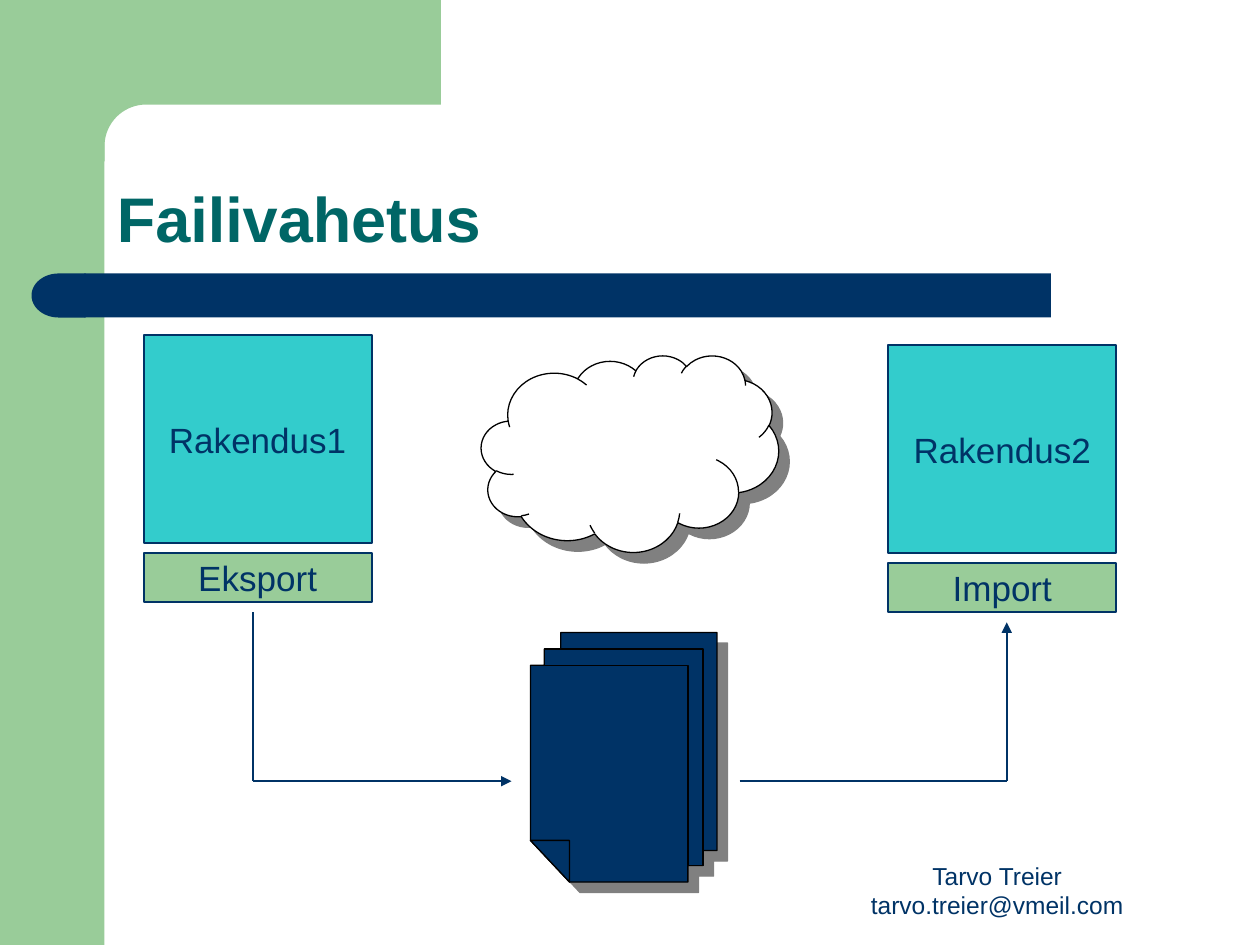
import math

import lxml.etree
import pptx
import pptx.dml.color
import pptx.enum.shapes
import pptx.enum.text
import pptx.oxml.ns
import pptx.util

Inches = pptx.util.Inches
SHAPE = pptx.enum.shapes.MSO_SHAPE
ANCHOR = pptx.enum.text.MSO_ANCHOR
ALIGN = pptx.enum.text.PP_ALIGN

NAVY, GREEN, TEAL, TURQUOISE = "003366", "99CC99", "006666", "33CCCC"
WHITE, BLACK, GREY = "FFFFFF", "000000", "808080"


def color(value):
    return pptx.dml.color.RGBColor.from_string(value)


def add_element(parent, tag, **attributes):
    element = lxml.etree.SubElement(parent, pptx.oxml.ns.qn(tag))
    for name, value in attributes.items():
        element.set(name, str(value))
    return element


def set_attributes(target, values):
    for name, value in values.items():
        setattr(target, name, value)


def style(shape, fill, line=None, width=1):
    shape.shadow.inherit = False
    shape.fill.solid()
    shape.fill.fore_color.rgb = color(fill)
    if line:
        shape.line.color.rgb = color(line)
        shape.line.width = pptx.util.Pt(width)
    else:
        shape.line.fill.background()
    return shape


def add_preset(slide, kind, box, fill, line=None, width=1):
    shape = slide.shapes.add_shape(kind, *map(Inches, box))
    return style(shape, fill, line, width)


def add_outline(slide, points, fill, line=None, width=1):
    # The builder keeps whole numbers only, so points go in as EMU
    start, *rest = [(Inches(x), Inches(y)) for x, y in points]
    builder = slide.shapes.build_freeform(*start)
    builder.add_line_segments(rest, close=True)
    return style(builder.convert_to_shape(), fill, line, width)


def add_drop_shadow(shape):
    effects = shape._element.spPr.find(pptx.oxml.ns.qn("a:effectLst"))
    shadow = add_element(effects, "a:outerShdw", dist=pptx.util.Pt(8.5),
                         dir=45 * 60000, algn="ctr", rotWithShape=0)
    add_element(shadow, "a:srgbClr", val=GREY)


def write(shape, text, size, fill, frame_format, paragraph_format, bold=False):
    frame = shape.text_frame
    set_attributes(frame, frame_format)
    paragraph = frame.paragraphs[0]
    paragraph.text = text
    set_attributes(paragraph, paragraph_format)
    for run in paragraph.runs:
        set_attributes(run.font, {"name": "Arial", "size": pptx.util.Pt(size), "bold": bold})
        run.font.color.rgb = color(fill)


def add_line(slide, start, end, arrow=None):
    line = slide.shapes.add_connector(pptx.enum.shapes.MSO_CONNECTOR.STRAIGHT,
                                      *map(Inches, start + end))
    line.line.color.rgb = color(NAVY)
    line.line.width = pptx.util.Pt(1)
    if arrow:
        add_element(line.line._get_or_add_ln(), arrow, type="triangle")
    add_element(line._element.spPr, "a:effectLst")


def draw_frame(slide, left, top, side, height):
    """Green side band, rounded inner corner and navy title bar."""
    add_preset(slide, SHAPE.RECTANGLE, (left, top, side, height), GREEN)
    radius, right, inner_top = 0.33, left + 3.5, top + 0.83
    # Quarter circle from the top of the inner corner down to the side band
    corner = [(left + side + radius * (1 - math.sin(angle)),
               inner_top + radius * (1 - math.cos(angle)))
              for angle in (math.radians(step) for step in range(0, 91, 5))]
    add_outline(slide, [(right, top), (right, inner_top), *corner,
                        (left + side, top + 1.28), (left + 0.5, top + 1.28),
                        (left + 0.5, top)], GREEN)
    add_preset(slide, SHAPE.RECTANGLE, (left + 0.67, top + 2.17, 7.67, 0.35), NAVY)
    cap = add_preset(slide, SHAPE.FLOWCHART_DELAY, (left + 0.25, top + 2.17, 0.43, 0.35), NAVY)
    cap.rotation = 180


def draw_text(slide, box, text, size, fill, paragraph_format, bold=False):
    text_box = slide.shapes.add_textbox(*map(Inches, box))
    write(text_box, text, size, fill,
          {"word_wrap": True, "vertical_anchor": ANCHOR.BOTTOM}, paragraph_format, bold)


def draw_application(slide, left, top, name, action):
    """Application box with its export or import strip below."""
    parts = ((name, top, 1.65, TURQUOISE), (action, top + 1.73, 0.39, GREEN))
    for text, part_top, height, fill in parts:
        shape = add_preset(slide, SHAPE.RECTANGLE, (left, part_top, 1.81, height), fill, NAVY)
        write(shape, text, 20, NAVY,
              {"word_wrap": False, "vertical_anchor": ANCHOR.MIDDLE,
               "margin_left": 0, "margin_right": 0},
              {"alignment": ALIGN.CENTER})


def draw_documents(slide, left, top, width, height):
    """Stack of three pages, the front one with a folded corner."""
    right, bottom = left + width, top + height
    x1, x2 = left + 0.11, left + 0.24
    y1, y2 = top + 0.13, top + 0.26
    front, middle = right - 0.23, right - 0.11
    low, lower = bottom - 0.25, bottom - 0.13
    fold_x, fold_y = left + 0.31, bottom - 0.33

    stack = [(left, fold_y), (left, y2), (x1, y2), (x1, y1), (x2, y1), (x2, top),
             (right, top), (right, low), (middle, low), (middle, lower),
             (front, lower), (front, bottom), (fold_x, bottom)]
    middle_edge = [(x1, y1), (middle, y1), (middle, lower), (front, lower),
                   (front, y2), (x1, y2)]
    fold = [(left, fold_y), (fold_x, fold_y), (fold_x, bottom)]
    shapes = [add_outline(slide, points, NAVY, BLACK, 0.75)
              for points in (stack, middle_edge, fold)]
    add_drop_shadow(shapes[0])


def draw_flow(slide, left, right, base):
    """Arrows from the export strip to the documents and on to the import strip."""
    add_line(slide, (left, base), (4.06, base), "a:tailEnd")
    add_line(slide, (left, base), (left, 4.86))
    add_line(slide, (right, 4.94), (right, base), "a:headEnd")
    add_line(slide, (5.87, base), (right, base))


def main():
    presentation = pptx.Presentation()
    presentation.slide_width, presentation.slide_height = Inches(10), Inches(7.5)
    slide = presentation.slides.add_slide(presentation.slide_layouts[6])

    draw_frame(slide, 0, 0, 0.83, 7.5)
    draw_text(slide, (6.33, 6.83, 3.17, 0.52), "Tarvo Treier\vtarvo.treier@vmeil.com",
              14, NAVY, {"alignment": ALIGN.CENTER})
    draw_text(slide, (0.83, 0.83, 8.67, 1.25), "Failivahetus", 36, TEAL,
              {"line_spacing": 0.9}, bold=True)
    draw_application(slide, 1.14, 2.66, "Rakendus1", "Eksport")
    draw_application(slide, 7.05, 2.74, "Rakendus2", "Import")

    # Network cloud
    cloud = add_preset(slide, SHAPE.CLOUD, (3.82, 2.82, 2.36, 1.56), WHITE, BLACK, 0.75)
    add_drop_shadow(cloud)

    draw_documents(slide, 4.21, 5.02, 1.48, 1.98)
    draw_flow(slide, 2.01, 7.99, 6.2)
    presentation.save("out.pptx")


if __name__ == "__main__":
    main()
